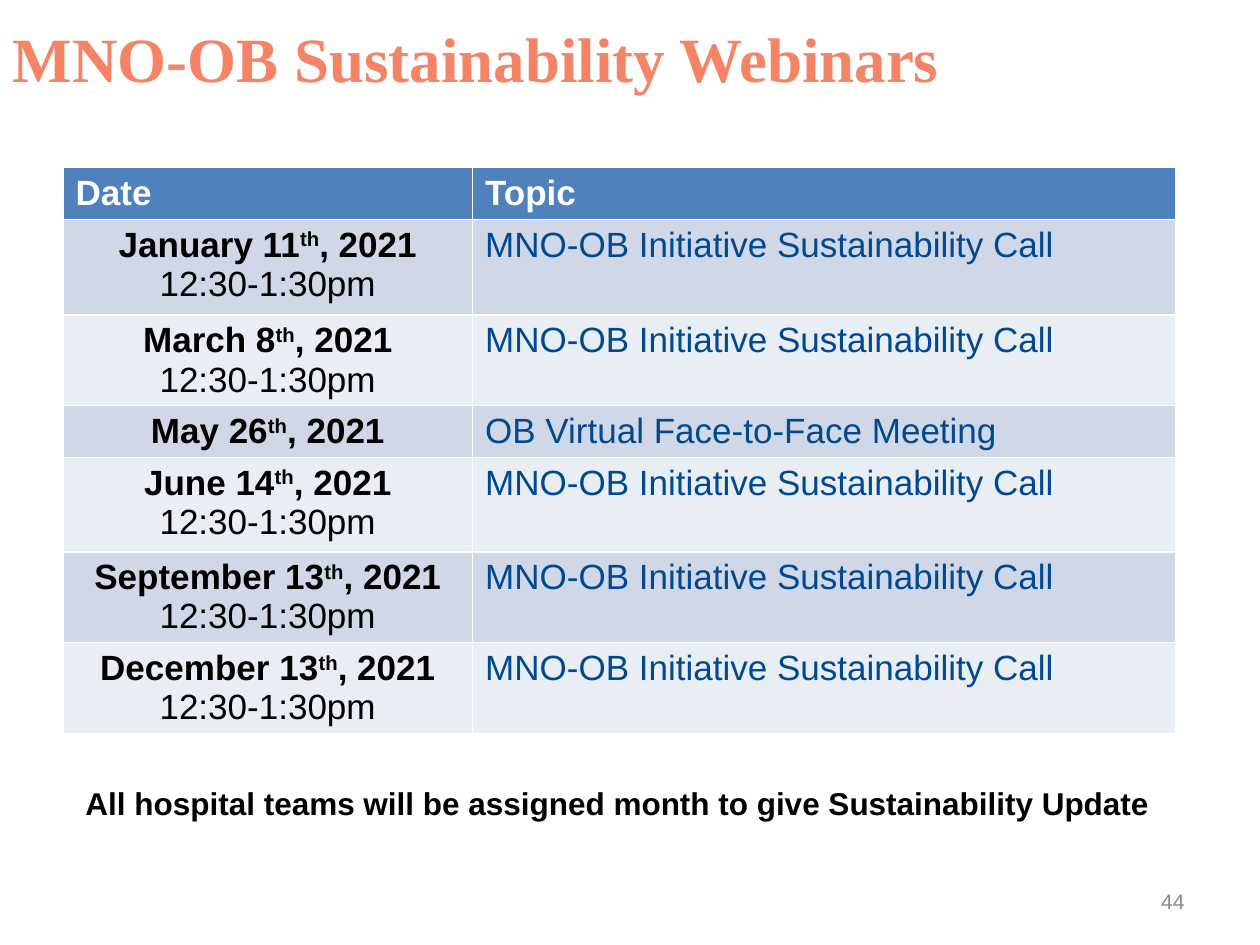
from pptx import Presentation
from pptx.dml.color import RGBColor
from pptx.enum.shapes import MSO_SHAPE
from pptx.enum.text import MSO_ANCHOR, PP_ALIGN
from pptx.util import Inches, Pt

CORAL = RGBColor(0xF5, 0x84, 0x66)
BLUE = RGBColor(0x4F, 0x81, 0xBD)
NAVY = RGBColor(0x00, 0x49, 0x90)
BAND_DARK = RGBColor(0xD0, 0xD8, 0xE8)
BAND_LIGHT = RGBColor(0xE9, 0xED, 0xF4)
GREY = RGBColor(0x89, 0x89, 0x89)
BLACK = RGBColor(0x00, 0x00, 0x00)
WHITE = RGBColor(0xFF, 0xFF, 0xFF)

CALL = "MNO-OB Initiative Sustainability Call"
TIME = "12:30-1:30pm"
WEBINARS = [
    ("January 11", TIME, CALL, 0.76),
    ("March 8", TIME, CALL, 0.72),
    ("May 26", None, "OB Virtual Face-to-Face Meeting", 0.41),
    ("June 14", TIME, CALL, 0.75),
    ("September 13", TIME, CALL, 0.72),
    ("December 13", TIME, CALL, 0.72),
]


def add_span(para, text, size, color, bold=False, name="Arial"):
    span = para.add_run()
    span.text = text
    span.font.name = name
    span.font.size = Pt(size)
    span.font.bold = bold
    span.font.color.rgb = color
    return span


deck = Presentation()
deck.slide_width = Inches(10)
deck.slide_height = Inches(7.5)
page = deck.slides.add_slide(deck.slide_layouts[5])

title = page.shapes.title
title.left, title.top = Inches(0), Inches(-0.17)
title.width, title.height = Inches(7.92), Inches(1.25)
title.text_frame.vertical_anchor = MSO_ANCHOR.MIDDLE
para = title.text_frame.paragraphs[0]
para.alignment = PP_ALIGN.LEFT
add_span(para, "MNO-OB Sustainability Webinars", 36, CORAL, True, "Times New Roman")

table = page.shapes.add_table(
    len(WEBINARS) + 1, 2, Inches(0.5), Inches(1.33), Inches(8.83), Inches(4.48)
).table
table.columns[0].width = Inches(3.25)
table.columns[1].width = Inches(5.58)
table.rows[0].height = Inches(0.4)

for column, heading in enumerate(["Date", "Topic"]):
    cell = table.cell(0, column)
    cell.fill.solid()
    cell.fill.fore_color.rgb = BLUE
    add_span(cell.text_frame.paragraphs[0], heading, 20, WHITE, True)

for row, (day, time, topic, height) in enumerate(WEBINARS, start=1):
    table.rows[row].height = Inches(height)
    date_cell, topic_cell = table.cell(row, 0), table.cell(row, 1)
    for cell in (date_cell, topic_cell):
        cell.fill.solid()
        cell.fill.fore_color.rgb = BAND_DARK if row % 2 else BAND_LIGHT

    para = date_cell.text_frame.paragraphs[0]
    para.alignment = PP_ALIGN.CENTER
    add_span(para, day, 20, BLACK, True)
    suffix = add_span(para, "th", 20, BLACK, True)
    suffix.font._element.set("baseline", "30000")
    add_span(para, ", 2021", 20, BLACK, True)
    if time:
        para = date_cell.text_frame.add_paragraph()
        para.alignment = PP_ALIGN.CENTER
        add_span(para, time, 20, BLACK)
    add_span(topic_cell.text_frame.paragraphs[0], topic, 20, NAVY)

number_box = page.shapes.add_textbox(Inches(7.17), Inches(6.95), Inches(2.33), Inches(0.4))
number_box.text_frame.word_wrap = True
number_box.text_frame.vertical_anchor = MSO_ANCHOR.MIDDLE
para = number_box.text_frame.paragraphs[0]
para.alignment = PP_ALIGN.RIGHT
add_span(para, "44", 12, GREY)

note = page.shapes.add_shape(
    MSO_SHAPE.RECTANGLE, Inches(0.58), Inches(6.17), Inches(9.08), Inches(0.4)
)
note.shadow.inherit = False
note.fill.solid()
note.fill.fore_color.rgb = WHITE
note.line.fill.background()
note.text_frame.word_wrap = True
note.text_frame.vertical_anchor = MSO_ANCHOR.TOP
para = note.text_frame.paragraphs[0]
para.alignment = PP_ALIGN.LEFT
add_span(para, "All hospital teams will be assigned month to give Sustainability Update", 18, BLACK, True)

deck.save("out.pptx")
